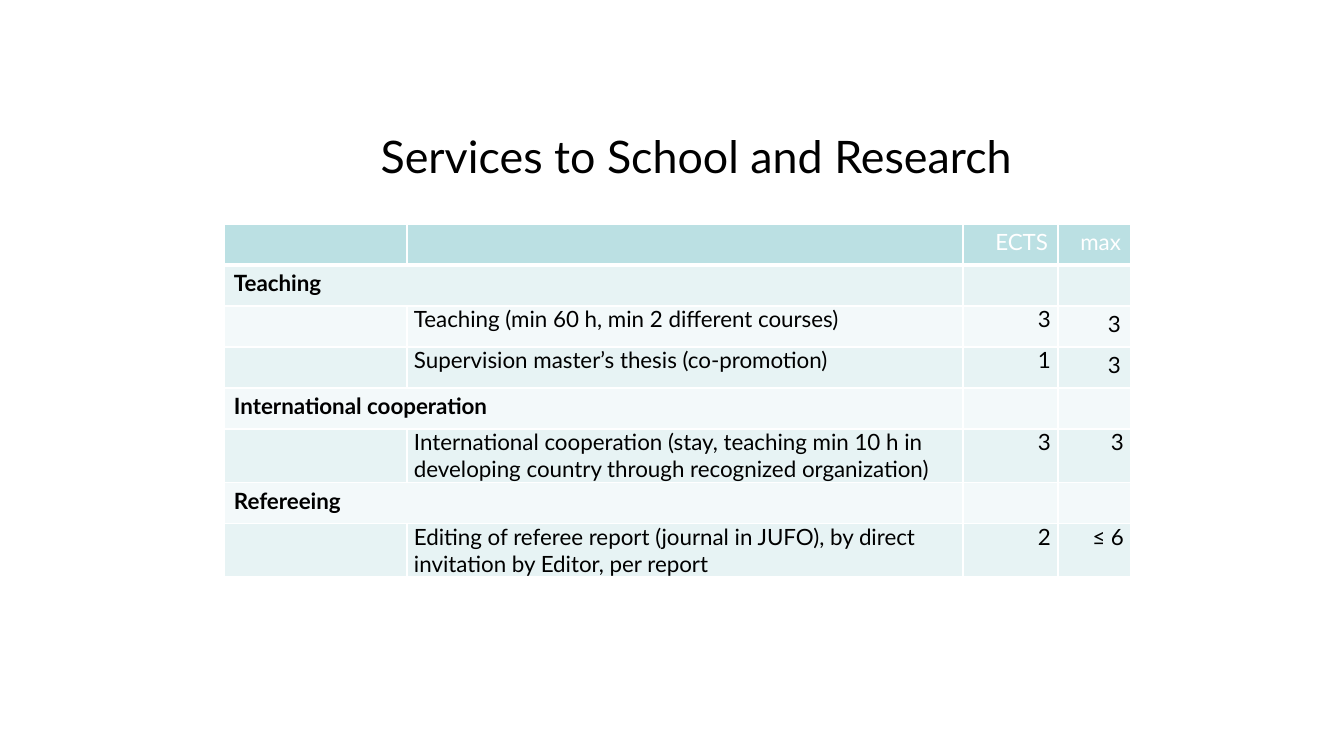
import pptx
import pptx.dml.color
import pptx.enum.text
import pptx.oxml
import pptx.oxml.ns
import pptx.util

RGB = pptx.dml.color.RGBColor
BLACK = RGB(0x00, 0x00, 0x00)
WHITE = RGB(0xFF, 0xFF, 0xFF)
HEADER_TEAL = RGB(0xBB, 0xE0, 0xE3)
BANDS = [RGB(0xE7, 0xF3, 0xF4), RGB(0xF3, 0xF9, 0xFA)]

LEFT = pptx.enum.text.PP_ALIGN.LEFT
CENTER = pptx.enum.text.PP_ALIGN.CENTER
RIGHT = pptx.enum.text.PP_ALIGN.RIGHT

HEADINGS = ["", "", "ECTS", "max"]
SERVICES = [
    ["Teaching", "", "", ""],
    ["", "Teaching (min 60 h, min 2 different courses)", "3", "3"],
    ["", "Supervision master’s thesis (co-promotion)", "1", "3"],
    ["International cooperation", "", "", ""],
    ["", "International cooperation (stay, teaching min 10 h in developing "
         "country through recognized organization)", "3", "3"],
    ["Refereeing", "", "", ""],
    ["", "Editing of referee report (journal in JUFO), by direct invitation "
         "by Editor, per report", "2", "≤ 6"],
]
COLUMN_WIDTHS = [183, 556, 95, 73]
ROW_HEIGHTS = [41, 41, 41, 41, 41, 53, 41, 53]
ROOMY, TIGHT = (10, 5), (7, 0)


def px(length):
    """Turn px, at 100.8 to the inch, into EMU."""
    return pptx.util.Emu(round(length * 914400 / 100.8))


def write(frame, text, size=16, color=BLACK, bold=False, align=LEFT, font="Lato"):
    paragraph = frame.paragraphs[0]
    paragraph.alignment = align
    run = paragraph.add_run()
    run.text = text
    run.font.name = font
    run.font.size = pptx.util.Pt(size)
    run.font.bold = bold
    run.font.color.rgb = color


class ServicesSlide:
    def __init__(self, presentation):
        self.slide = presentation.slides.add_slide(presentation.slide_layouts[5])

    def title(self, text, left, top, width, height):
        title = self.slide.shapes.title
        title.left, title.top = px(left), px(top)
        title.width, title.height = px(width), px(height)
        frame = title.text_frame
        frame.word_wrap = True
        frame.auto_size = pptx.enum.text.MSO_AUTO_SIZE.NONE
        frame.vertical_anchor = pptx.enum.text.MSO_ANCHOR.TOP
        write(frame, text, size=32, align=CENTER)

    def borders(self, cell, bottom):
        properties = cell._tc.get_or_add_tcPr()
        for side, points in (("L", 1), ("R", 1), ("T", 1), ("B", bottom)):
            properties.append(pptx.oxml.parse_xml(
                f'<a:ln{side} {pptx.oxml.ns.nsdecls("a")} w="{pptx.util.Pt(points)}">'
                f'<a:solidFill><a:srgbClr val="{WHITE}"/></a:solidFill></a:ln{side}>'))

    def cell(self, cell, text, fill, insets=ROOMY, bottom=1, **text_format):
        self.borders(cell, bottom)
        cell.fill.solid()
        cell.fill.fore_color.rgb = fill
        cell.margin_left = cell.margin_right = px(insets[0])
        cell.margin_top = cell.margin_bottom = px(insets[1])
        if text:
            write(cell.text_frame, text, **text_format)

    def table(self, left, top):
        table = self.slide.shapes.add_table(
            len(ROW_HEIGHTS), len(COLUMN_WIDTHS), px(left), px(top),
            px(sum(COLUMN_WIDTHS)), px(sum(ROW_HEIGHTS))).table
        table.horz_banding = False
        for column, width in zip(table.columns, COLUMN_WIDTHS):
            column.width = px(width)
        for row, height in zip(table.rows, ROW_HEIGHTS):
            row.height = px(height)

        for column, heading in enumerate(HEADINGS):
            self.cell(table.cell(0, column), heading, HEADER_TEAL, bottom=3,
                      color=WHITE, align=RIGHT)
        for row, service in enumerate(SERVICES, start=1):
            for column, text in enumerate(service):
                roomy_max = column == 3 and row in (2, 3)
                tight = column > 0 and text and not roomy_max
                self.cell(table.cell(row, column), text, BANDS[(row - 1) % 2],
                          insets=TIGHT if tight else ROOMY, bold=column == 0,
                          align=RIGHT if column > 1 else LEFT)
            if service[0]:
                table.cell(row, 0).merge(table.cell(row, 1))


def main():
    presentation = pptx.Presentation()
    presentation.slide_width, presentation.slide_height = px(1344), px(756)
    services = ServicesSlide(presentation)
    services.title("Services to School and Research", 172, 124, 1049, 88)
    services.table(224, 224)
    presentation.save("out.pptx")


if __name__ == "__main__":
    main()
